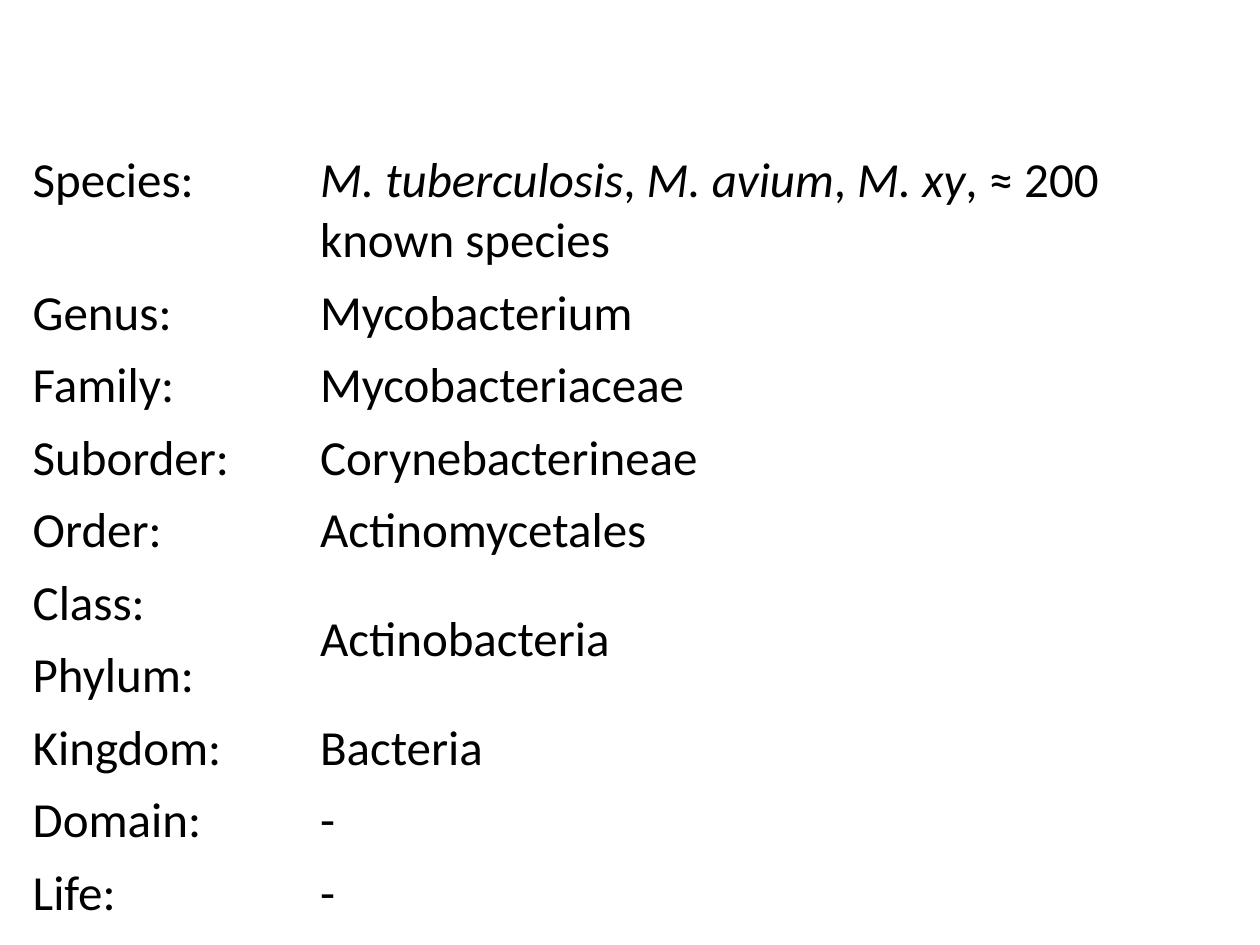
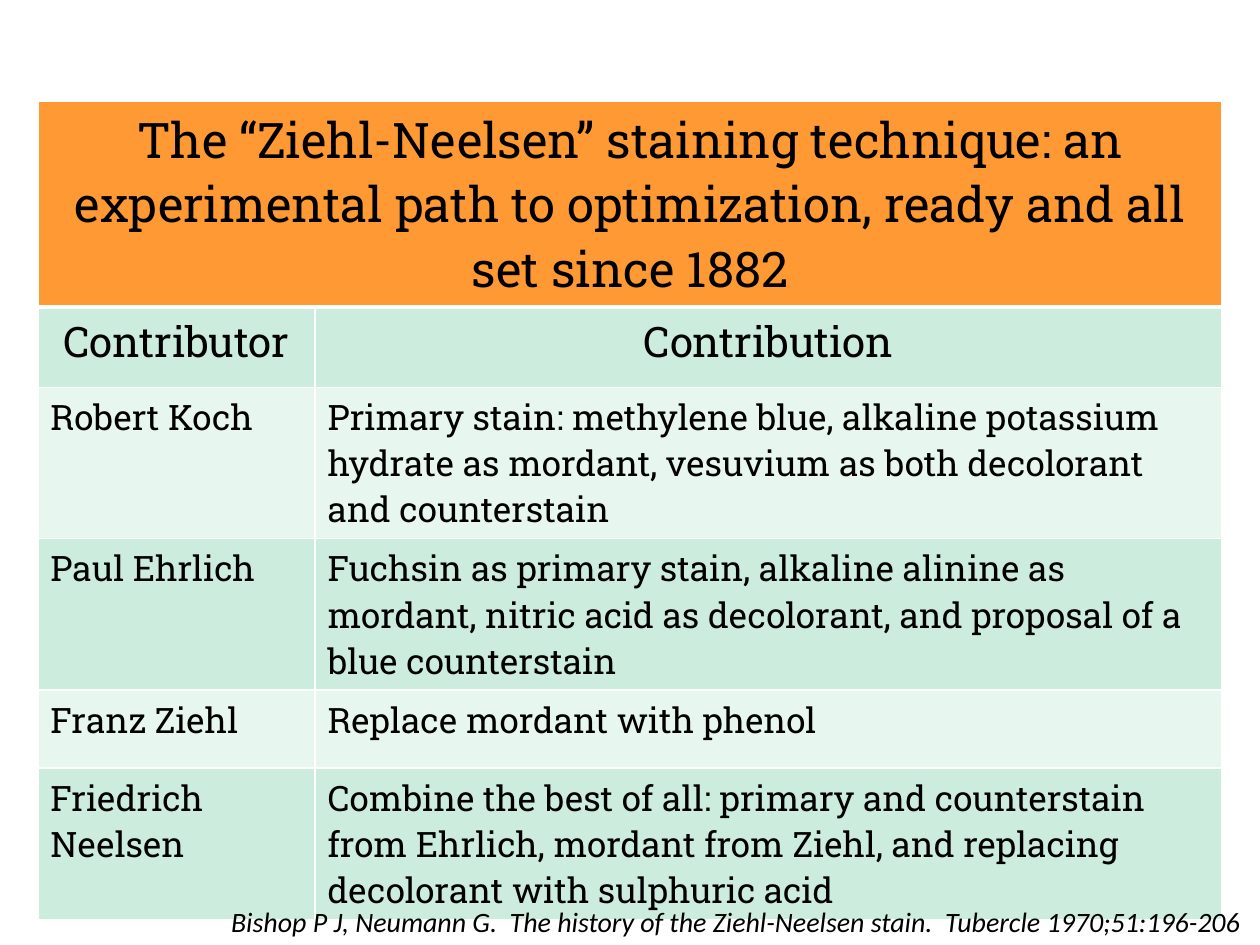
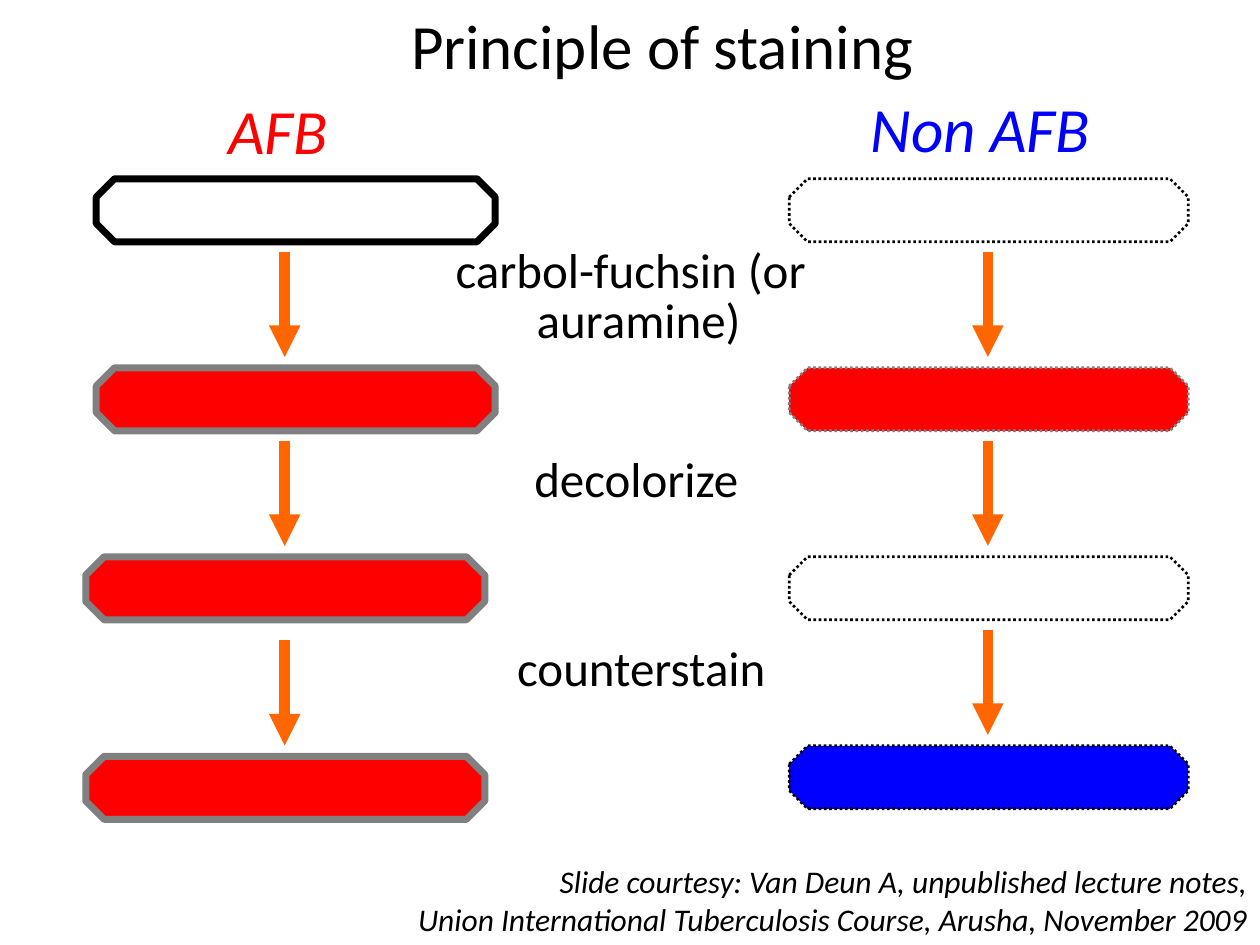
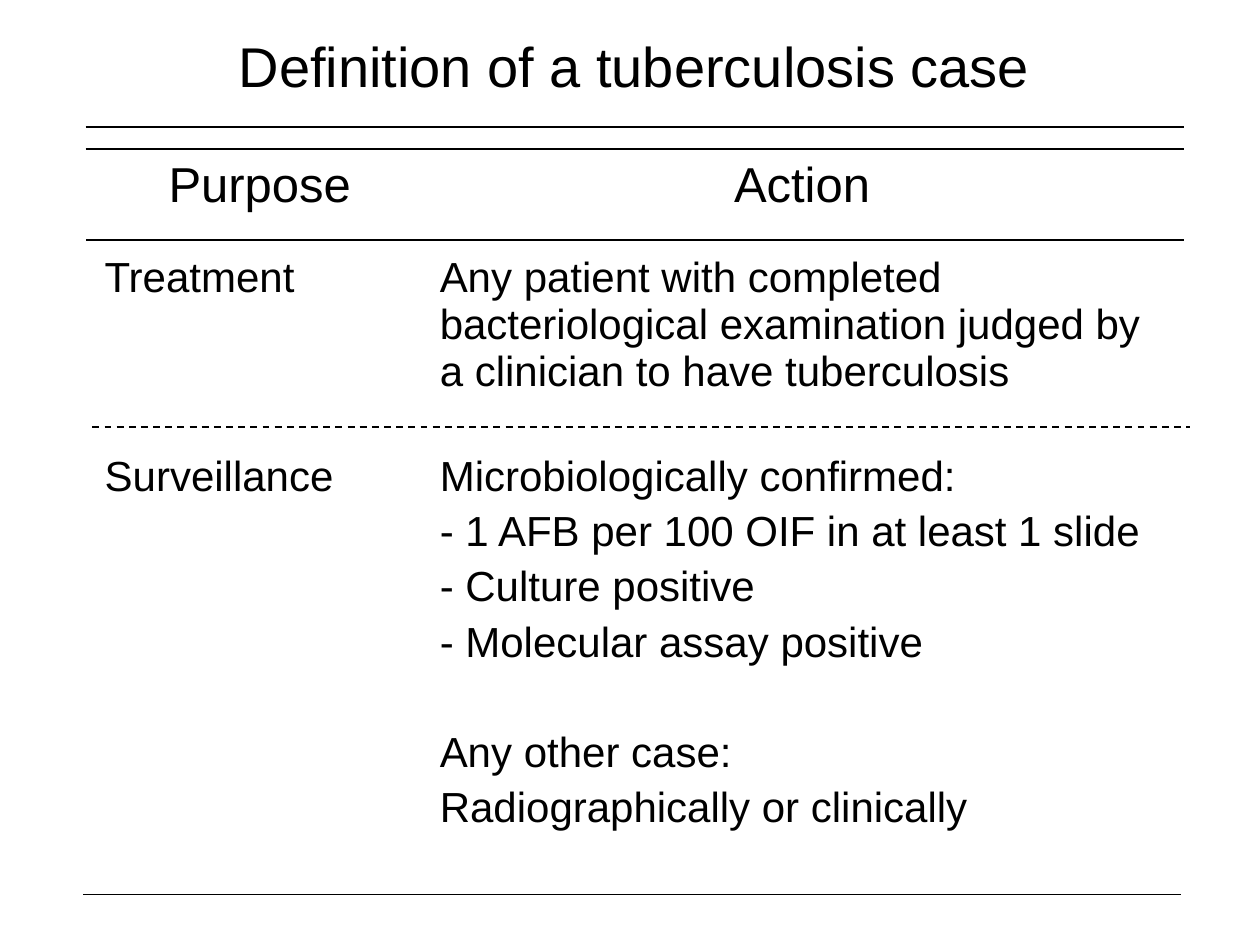
from dataclasses import dataclass
from typing import Optional

from lxml.etree import SubElement
from pptx import Presentation
from pptx.dml.color import RGBColor
from pptx.enum.dml import MSO_LINE as Dash
from pptx.enum.shapes import MSO_CONNECTOR as Conn, MSO_SHAPE as Shape
from pptx.enum.text import MSO_ANCHOR as Anchor, PP_ALIGN as Align
from pptx.oxml.ns import qn
from pptx.util import Pt

# Shared look
BODY, SLAB, SANS = "Calibri", "Roboto Slab", "Arial"
BLACK, WHITE, GREY = "000000", "FFFFFF", "808080"
RED, BLUE, ORANGE = "FF0000", "0000FF", "FF6600"
HEAD_FILL, BAND_DARK, BAND_LIGHT = "FF9933", "CCECDE", "E7F6EF"


@dataclass
class Label:
    """A text box; sizes in points."""
    text: str
    x: float
    y: float
    w: float
    h: float
    size: float
    color: str = BLACK
    italic: bool = False
    align: Align = Align.CENTER
    anchor: Anchor = Anchor.TOP
    wrap: bool = True
    spacing: Optional[float] = None
    hang: float = 0


@dataclass
class Cell_:
    """One bacillus: position, fill and cell wall."""
    x: float
    y: float
    fill: str
    wall: str
    thick: bool


@dataclass
class Rule:
    """A straight line or arrow; sizes in points."""
    x1: float
    y1: float
    x2: float
    y2: float
    color: str = BLACK
    width: float = 1
    dash: Optional[Dash] = None
    arrow: bool = False


def rgb(color: str) -> RGBColor:
    return RGBColor.from_string(color)


def put_text(tf, text, *, size, font=BODY, color=BLACK, italic=False,
             align=Align.LEFT, spacing=None, hang=0, before=()) -> None:
    """Fill a frame; a line is a string or a list of (text, italic) runs."""
    lines = text.split("\n") if isinstance(text, str) else text
    for i, line in enumerate(lines):
        p = tf.paragraphs[0] if i == 0 else tf.add_paragraph()
        p.alignment = align
        if spacing:
            p.line_spacing = spacing
        if i and before:
            p.space_before = Pt(before[i])
        if hang:
            pPr = p._p.get_or_add_pPr()
            pPr.set("marL", str(Pt(hang)))
            pPr.set("indent", str(-Pt(hang)))
        for part, slanted in [(line, italic)] if isinstance(line, str) else line:
            r = p.add_run()
            r.text = part
            r.font.name, r.font.size = font, Pt(size)
            r.font.italic = slanted
            r.font.color.rgb = rgb(color)


def add_label(s, b: Label) -> None:
    sp = s.shapes.add_textbox(Pt(b.x), Pt(b.y), Pt(b.w), Pt(b.h))
    tf = sp.text_frame
    tf.word_wrap, tf.vertical_anchor = b.wrap, b.anchor
    put_text(tf, b.text, size=b.size, color=b.color, italic=b.italic,
             align=b.align, spacing=b.spacing, hang=b.hang)


def add_cell(s, c: Cell_) -> None:
    sp = s.shapes.add_shape(Shape.OCTAGON, Pt(c.x), Pt(c.y), Pt(228), Pt(36))
    sp.adjustments[0] = 0.29
    sp.shadow.inherit = False
    sp.fill.solid()
    sp.fill.fore_color.rgb = rgb(c.fill)
    sp.line.color.rgb = rgb(c.wall)
    sp.line.width = Pt(4 if c.thick else 1.5)
    if not c.thick:
        sp.line.dash_style = Dash.ROUND_DOT


def add_rule(s, k: Rule) -> None:
    cx = s.shapes.add_connector(Conn.STRAIGHT, Pt(k.x1), Pt(k.y1), Pt(k.x2), Pt(k.y2))
    cx.line.color.rgb = rgb(k.color)
    cx.line.width = Pt(k.width)
    if k.dash:
        cx.line.dash_style = k.dash
    if k.arrow:
        SubElement(cx.line._get_or_add_ln(), qn("a:tailEnd"), type="triangle")
    SubElement(cx._element.spPr, qn("a:effectLst"))


def add_grid(s, x, y, cols, rows, height):
    """Add an unstyled table; rows grow with their text."""
    gf = s.shapes.add_table(len(rows), len(cols), Pt(x), Pt(y), Pt(sum(cols)), Pt(height))
    table = gf.table
    table.first_row = table.horz_banding = False
    for col, w in zip(table.columns, cols):
        col.width = Pt(w)
    for row, h in zip(table.rows, rows):
        row.height = Pt(h)
    gf.height = Pt(height)
    for cell in table.iter_cells():
        cell.fill.background()
    return table


def set_borders(cell, color: str, bottom: float = 1, top: float = 1) -> None:
    tcPr = cell._tc.get_or_add_tcPr()
    for i, (side, width) in enumerate((("L", 1), ("R", 1), ("T", top), ("B", bottom))):
        ln = SubElement(tcPr, qn(f"a:ln{side}"), w=str(Pt(width)))
        SubElement(SubElement(ln, qn("a:solidFill")), qn("a:srgbClr"), val=color)
        tcPr.insert(i, ln)


def taxonomy_slide(s) -> None:
    species = [[("M. tuberculosis", True), (", ", False), ("M. avium", True), (", ", False),
                ("M. xy", True), (", ≈ 200 known species", False)]]
    ranks = [
        ("Species:", species), ("Genus:", "Mycobacterium"), ("Family:", "Mycobacteriaceae"),
        ("Suborder:", "Corynebacterineae"), ("Order:", "Actinomycetales"),
        ("Class:", "Actinobacteria"), ("Phylum:", None), ("Kingdom:", "Bacteria"),
        ("Domain:", "-"), ("Life:", "-"),
    ]
    table = add_grid(s, 11.5, 82.8, [164.2, 529.9], [29.5] * len(ranks), 441.4)
    table.cell(5, 1).merge(table.cell(6, 1))  # class and phylum share a name
    table.cell(5, 1).vertical_anchor = Anchor.MIDDLE
    for i, rank in enumerate(ranks):
        for j, text in enumerate(rank):
            if text:
                put_text(table.cell(i, j).text_frame, text, size=28)


def history_slide(s) -> None:
    rows = [
        ("The “Ziehl-Neelsen” staining technique: an experimental path to optimization, "
         "ready and all set since 1882",),
        ("Contributor", "Contribution"),
        ("Robert Koch", "Primary stain: methylene blue, alkaline potassium hydrate as mordant, "
                        "vesuvium as both decolorant and counterstain"),
        ("Paul Ehrlich", "Fuchsin as primary stain, alkaline alinine as mordant, nitric acid "
                         "as decolorant, and proposal of a blue counterstain"),
        ("Franz Ziehl", "Replace mordant with phenol"),
        ("Friedrich Neelsen", "Combine the best of all: primary and counterstain from Ehrlich, "
                              "mordant from Ziehl, and replacing decolorant with sulphuric acid"),
    ]
    table = add_grid(s, 21.6, 57.6, [158.4, 518.4], [103, 46, 70, 67, 44.6, 29.5], 436.3)
    table.cell(0, 0).merge(table.cell(0, 1))
    for i, row in enumerate(rows):
        fill = HEAD_FILL if i == 0 else BAND_DARK if i % 2 else BAND_LIGHT
        for j in range(2):
            cell = table.cell(i, j)
            cell.fill.solid()
            cell.fill.fore_color.rgb = rgb(fill)
            set_borders(cell, WHITE, bottom=3 if i == 0 else 1, top=3 if i == 1 else 1)
        for j, text in enumerate(row):
            put_text(table.cell(i, j).text_frame, text, font=SLAB,
                     size={0: 28, 1: 24}.get(i, 20),
                     align=Align.CENTER if i < 2 else Align.LEFT)
    add_label(s, Label("Bishop P J, Neumann G.  The history of the Ziehl-Neelsen stain.  "
                       "Tubercle 1970;51:196-206",
                       121, 513.4, 599, 26.6, 16, italic=True, wrap=False))


def staining_slide(s) -> None:
    # Title and column heads
    add_label(s, Label("Principle of staining", 132.5, 0, 491.8, 50.4, 36))
    for text, x, y, w, color in (("AFB", 123, 48.2, 72, RED),
                                 ("Non AFB", 489.6, 47.5, 141, BLUE)):
        add_label(s, Label(text, x, y, w, 51, 36, color, italic=True,
                           anchor=Anchor.MIDDLE, wrap=False))

    # Four stages of each kind of cell; the last AFB stage sits a little lower
    top, step, drop = 102.2, 108, 6
    afb = [(WHITE, BLACK), (RED, GREY), (RED, GREY), (RED, GREY)]
    non_afb = [(WHITE, BLACK), (RED, GREY), (WHITE, BLACK), (BLUE, BLACK)]
    for i in range(4):
        y = top + step * i
        add_cell(s, Cell_(55 if i < 2 else 49, y + drop * (i == 3), *afb[i], thick=True))
        add_cell(s, Cell_(451, y, *non_afb[i], thick=False))

    # Arrows between the stages
    for i in range(3):
        for x, shift in ((162.7, drop * (i == 2)), (564.5, 0)):
            y = 144 + step * i + shift
            add_rule(s, Rule(x, y, x, y + 60, ORANGE, 6, arrow=True))

    # Steps
    for text, x, y, w, h in (("carbol-fuchsin (or auramine)", 240.5, 138.2, 239.8, 65.5),
                             ("decolorize", 240.5, 257.8, 246.2, 36.7),
                             ("counterstain", 222.5, 365.8, 288, 36.7)):
        add_label(s, Label(text, x, y, w, h, 28, spacing=0.85, hang=9))

    add_label(s, Label("Slide courtesy: Van Deun A, unpublished lecture notes,\n"
                       "Union International Tuberculosis Course, Arusha, November 2009",
                       226.8, 489, 493.2, 51, 18, italic=True, align=Align.RIGHT, wrap=False))


def definition_slide(s) -> None:
    rows = [
        ("Definition of a tuberculosis case",),
        ("Purpose", "Action"),
        ("Treatment", "Any patient with completed bacteriological examination judged by "
                      "a clinician to have tuberculosis"),
        ("Surveillance", "Microbiologically confirmed:\n"
                         "- 1 AFB per 100 OIF in at least 1 slide\n"
                         "- Culture positive\n"
                         "- Molecular assay positive\n"
                         "Any other case:\n"
                         "Radiographically or clinically"),
    ]
    table = add_grid(s, 52.6, 17.3, [191.5, 428.4], [69.8, 54.7, 113.8, 120.2], 481)
    table.cell(0, 0).merge(table.cell(0, 1))
    for i, row in enumerate(rows):
        for j, text in enumerate(row):
            put_text(table.cell(i, j).text_frame, text, font=SANS,
                     size=(32, 28, 24, 24)[i],
                     align=Align.CENTER if i < 2 else Align.LEFT,
                     before=(0, 4.8, 4.8, 4.8, 36.4, 4.8))
    # Rules between the rows
    for x, y, dash in ((49, 72.7, None), (49, 85, None), (49.2, 137, None),
                       (47.5, 511.2, None), (52.8, 244.1, Dash.DASH)):
        add_rule(s, Rule(x, y, x + 627.3, y, dash=dash))


def main() -> None:
    prs = Presentation()
    prs.slide_width, prs.slide_height = Pt(720), Pt(540)
    for build in (taxonomy_slide, history_slide, staining_slide, definition_slide):
        build(prs.slides.add_slide(prs.slide_layouts[6]))
    prs.save("out.pptx")


if __name__ == "__main__":
    main()
